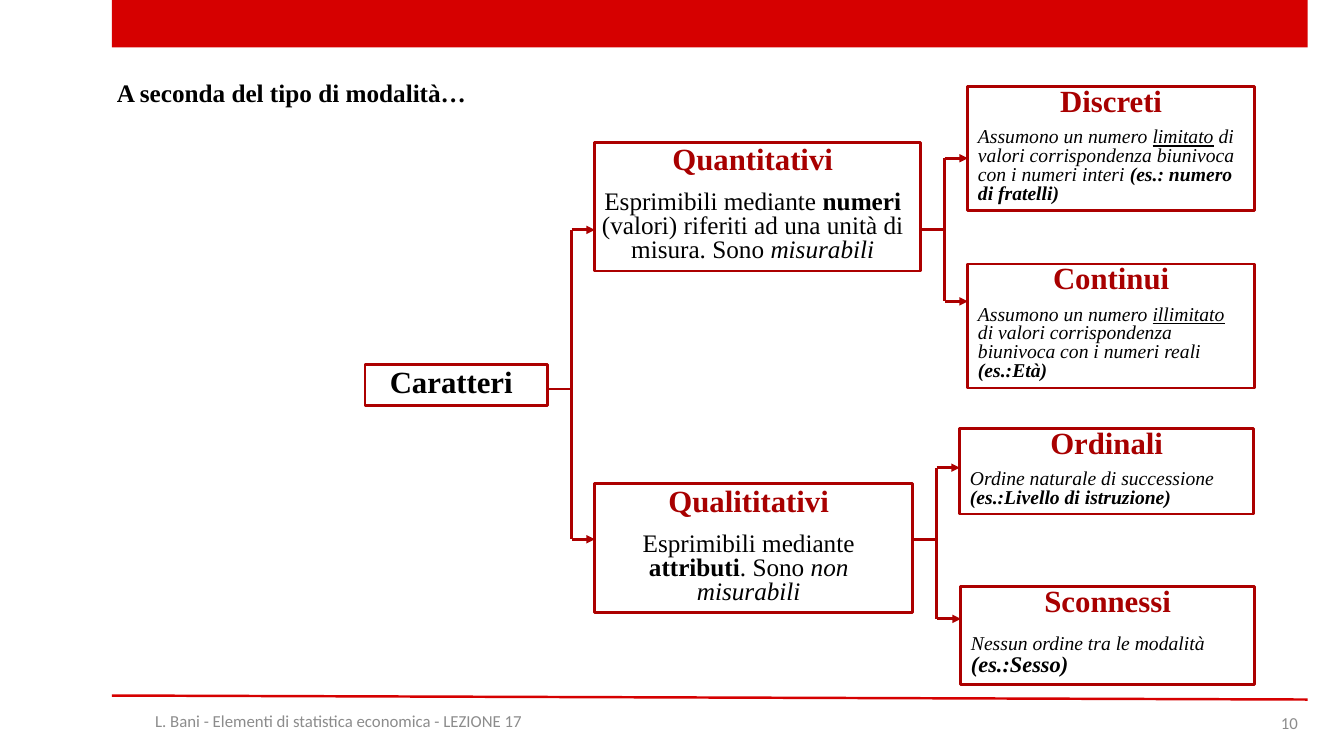
from lxml import etree
from pptx import Presentation
from pptx.dml.color import RGBColor
from pptx.enum.shapes import MSO_CONNECTOR, MSO_SHAPE
from pptx.enum.text import MSO_ANCHOR, PP_ALIGN
from pptx.oxml.ns import qn
from pptx.util import Inches, Pt

RECT = MSO_SHAPE.RECTANGLE
STRAIGHT = MSO_CONNECTOR.STRAIGHT
TOP, MIDDLE = MSO_ANCHOR.TOP, MSO_ANCHOR.MIDDLE
LEFT, CENTER, RIGHT = PP_ALIGN.LEFT, PP_ALIGN.CENTER, PP_ALIGN.RIGHT

THEME = {
    "band": RGBColor(0xD6, 0x00, 0x00),
    "border": RGBColor(0xAC, 0x00, 0x00),
    "heading": RGBColor(0xA8, 0x00, 0x00),
    "text": RGBColor(0x00, 0x00, 0x00),
    "footer": RGBColor(0x8C, 0x8C, 0x8C),
    "serif": "Times New Roman",
    "sans": "Calibri",
    "heading_size": 22,
    "body_size": 18,
    "example_size": 16,
    "detail_size": 14,
    "footer_size": 12,
}

prs = Presentation()
prs.slide_width = Inches(13.33)
prs.slide_height = Inches(7.5)
s = prs.slides.add_slide(prs.slide_layouts[6])


def add_line(x1, y1, x2, y2, color, width, arrow=False):
    line = s.shapes.add_connector(STRAIGHT, Inches(x1), Inches(y1), Inches(x2), Inches(y2))
    line.line.color.rgb = color
    line.line.width = Pt(width)
    if arrow:
        etree.SubElement(line.line._get_or_add_ln(), qn("a:tailEnd"), type="triangle")
    etree.SubElement(line._element.spPr, qn("a:effectLst"))


def write_runs(p, runs, size, color, font):
    for text, style, *own_size in runs:
        r = p.add_run()
        r.text = text
        r.font.name = font
        r.font.size = Pt(own_size[0] if own_size else size)
        r.font.color.rgb = color
        r.font.bold = "b" in style
        r.font.italic = "i" in style
        r.font.underline = "u" in style


band = s.shapes.add_shape(RECT, Inches(1.11), 0, Inches(11.86), Inches(0.47))
band.shadow.inherit = False
band.fill.solid()
band.fill.fore_color.rgb = THEME["band"]
band.line.fill.background()
add_line(1.11, 6.9, 12.97, 6.94, THEME["band"], 1.75)

labels = [
    ((1.11, 6.95, 4.5, 0.4), "L. Bani - Elementi di statistica economica - LEZIONE 17",
     "", CENTER, MIDDLE, 1.0, THEME["footer_size"], THEME["footer"], THEME["sans"]),
    ((9.97, 6.97, 3, 0.4), "10",
     "", RIGHT, MIDDLE, 1.0, THEME["footer_size"], THEME["footer"], THEME["sans"]),
    ((1.06, 0.75, 4.31, 0.46), "A seconda del tipo di modalità…",
     "b", LEFT, TOP, 0.9, THEME["body_size"], THEME["text"], THEME["serif"]),
]
for place, text, style, align, anchor, spacing, size, color, font in labels:
    tf = s.shapes.add_textbox(*map(Inches, place)).text_frame
    tf.word_wrap = True
    tf.vertical_anchor = anchor
    p = tf.paragraphs[0]
    p.alignment = align
    p.line_spacing = spacing
    write_runs(p, [(text, style)], size, color, font)

classes = [
    ((3.62, 3.62, 1.81, 0.4), "Caratteri", []),
    ((5.9, 1.41, 3.23, 1.28), "Quantitativi", [
        ("Esprimibili mediante ", ""), ("numeri", "b"),
        (" (valori) riferiti ad una unità di misura. Sono ", ""), ("misurabili", "i")]),
    ((5.9, 4.8, 3.15, 1.28), "Qualititativi", [
        ("Esprimibili mediante ", ""), ("attributi", "b"),
        (". Sono ", ""), ("non misurabili", "i")]),
]
subclasses = [
    ((9.6, 0.86, 2.84, 1.23), "Discreti", [
        ("Assumono un numero ", "i"), ("limitato", "iu"),
        (" di valori corrispondenza biunivoca con i numeri interi ", "i"),
        ("(es.: numero di fratelli)", "bi")]),
    ((9.6, 2.62, 2.84, 1.23), "Continui", [
        ("Assumono un numero ", "i"), ("illimitato", "iu"),
        (" di valori corrispondenza biunivoca con i numeri reali ", "i"),
        ("(es.:Età)", "bi")]),
    ((9.52, 4.25, 2.91, 0.85), "Ordinali", [
        ("Ordine naturale di successione ", "i"), ("(es.:Livello di istruzione)", "bi")]),
    ((9.53, 5.82, 2.91, 0.97), "Sconnessi", [
        ("Nessun ordine tra le modalità", "i"), (" ", "i", THEME["body_size"]),
        ("(es.:Sesso)", "bi", THEME["example_size"])]),
]
for place, heading, body in classes + subclasses:
    is_subclass = (place, heading, body) in subclasses
    body_size = THEME["detail_size"] if is_subclass else THEME["body_size"]
    sp = s.shapes.add_shape(RECT, *map(Inches, place))
    sp.shadow.inherit = False
    sp.fill.background()
    sp.line.color.rgb = THEME["border"]
    sp.line.width = Pt(2)
    tf = sp.text_frame
    tf.word_wrap = True
    tf.vertical_anchor = TOP
    tf.margin_left = 0
    tf.margin_right = Inches(0.1)
    tf.margin_top = tf.margin_bottom = Inches(0.05)
    p = tf.paragraphs[0]
    p.alignment = CENTER
    p.line_spacing = 0.7 if is_subclass else 0.8
    color = THEME["heading"] if body else THEME["text"]
    write_runs(p, [(heading, "b")], THEME["heading_size"], color, THEME["serif"])
    if body:
        p = tf.add_paragraph()
        p.alignment = LEFT if is_subclass else CENTER
        p.line_spacing = 0.8
        p.space_before = Pt(10 if heading == "Sconnessi" else 0.57 * body_size)
        write_runs(p, body, body_size, THEME["text"], THEME["serif"])
    if is_subclass:
        for p in tf.paragraphs:
            pPr = p._p.get_or_add_pPr()
            pPr.set("marL", str(Inches(0.1)))
            pPr.set("indent", "0")

branches = [
    (5.43, 3.86, 5.67, [(5.9, 2.28), (5.9, 5.35)]),
    (9.13, 2.28, 9.37, [(9.6, 1.57), (9.6, 2.99)]),
    (9.05, 5.35, 9.29, [(9.52, 4.64), (9.53, 6.14)]),
]
for x, y, trunk_x, ends in branches:
    add_line(x, y, trunk_x, y, THEME["border"], 2)
    add_line(trunk_x, ends[0][1], trunk_x, ends[1][1], THEME["border"], 2)
    for end_x, end_y in ends:
        add_line(trunk_x, end_y, end_x, end_y, THEME["border"], 2, arrow=True)

prs.save("out.pptx")
